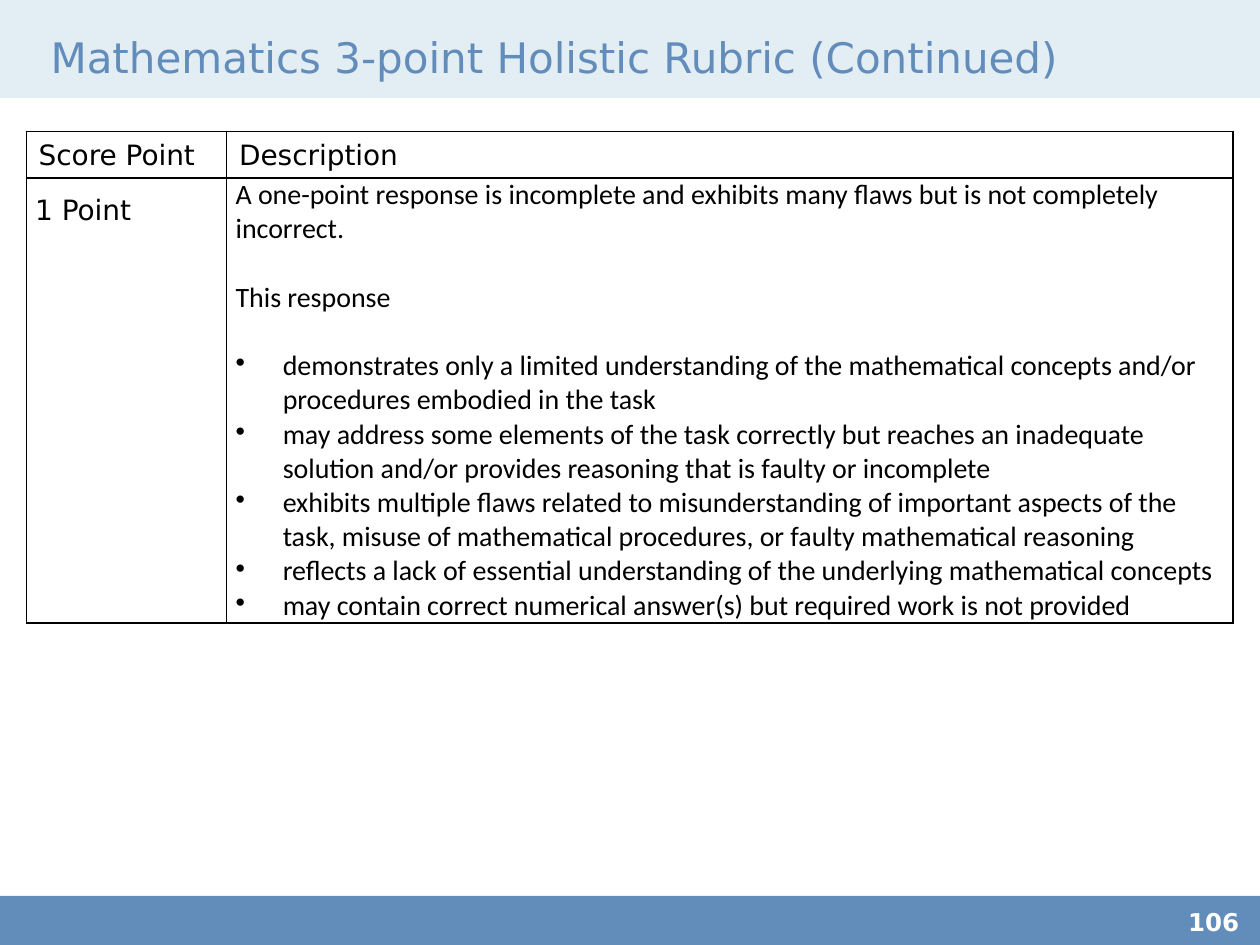
from dataclasses import dataclass

from lxml import etree
from pptx import Presentation
from pptx.dml.color import RGBColor
from pptx.enum.shapes import MSO_SHAPE
from pptx.enum.text import MSO_ANCHOR
from pptx.oxml.ns import qn
from pptx.util import Cm, Pt

RECT = MSO_SHAPE.RECTANGLE
TOP, MID, LOW = MSO_ANCHOR.TOP, MSO_ANCHOR.MIDDLE, MSO_ANCHOR.BOTTOM


@dataclass(frozen=True)
class Theme:
    blue: str = "628DBB"
    pale: str = "E3EDF4"
    white: str = "FFFFFF"
    black: str = "000000"
    head: str = "DejaVu Sans"
    body: str = "Calibri"
    large: int = 24
    text: int = 16
    small: int = 14
    gap: float = 19.5


THEME = Theme()
TITLE = "Mathematics 3-point Holistic Rubric (Continued)"
PAGE = "106"
HEADS = ["Score Point", "Description"]
SCORE = "1 Point"
INTRO = [
    "A one-point response is incomplete and exhibits many flaws but is not completely incorrect.",
    "This response",
]
TRAITS = [
    "demonstrates only a limited understanding of the mathematical concepts and/or procedures embodied in the task",
    "may address some elements of the task correctly but reaches an inadequate solution and/or provides reasoning that is faulty or incomplete",
    "exhibits multiple flaws related to misunderstanding of important aspects of the task, misuse of mathematical procedures, or faulty mathematical reasoning",
    "reflects a lack of essential understanding of the underlying mathematical concepts",
    "may contain correct numerical answer(s) but required work is not provided",
]
BARS = [
    (0, 18.06, 25.43, 1.07, THEME.blue),
    (0, 0, 25.4, 3.33, THEME.pale),
    (0, 1.98, 25.4, 2.18, THEME.white),
]
COLS = [4.04, 20.29]
ROWS = [0.91, 8.97]
HEAD_PAD = (0.25, 0.13, 0.25, 0.13)
BODY_PAD = (0.18, 0, 0.18, 0)


def pad(box, sides):
    """Set the left, top, right and bottom margins of a cell or text frame."""
    (box.margin_left, box.margin_top,
     box.margin_right, box.margin_bottom) = map(Cm, sides)


def write(frame, lines, size, face, color, bold=False):
    """Fill a text frame with lines of one style."""
    frame.text = "\n".join(lines)
    for para in frame.paragraphs:
        for run in para.runs:
            font = run.font
            font.size, font.name, font.bold = Pt(size), face, bold
            font.color.rgb = RGBColor.from_string(color)


def label(slide, place, text, size, color, sides, anchor, bold=False):
    """Add a one-line text box."""
    frame = slide.shapes.add_textbox(*map(Cm, place)).text_frame
    frame.word_wrap = True
    frame.vertical_anchor = anchor
    pad(frame, sides)
    write(frame, [text], size, THEME.head, color, bold)


def border(cell):
    """Draw a thin line on all four sides of a cell."""
    props = cell._tc.get_or_add_tcPr()
    for spot, side in enumerate(("lnL", "lnR", "lnT", "lnB")):
        line = etree.Element(qn("a:" + side), w=str(Pt(1)))
        fill = etree.SubElement(line, qn("a:solidFill"))
        etree.SubElement(fill, qn("a:srgbClr"), val=THEME.black)
        props.insert(spot, line)


def bullet(para):
    """Give a paragraph a bullet, a hanging indent and a tab stop."""
    props = para._p.get_or_add_pPr()
    hang = Cm(0.95)
    props.set("marL", str(hang))
    props.set("indent", str(-hang))
    etree.SubElement(props, qn("a:buChar"), char="•")
    tabs = etree.SubElement(props, qn("a:tabLst"))
    etree.SubElement(tabs, qn("a:tab"), pos=str(Cm(1.27)), algn="l")


def rubric(slide):
    """Add the table of score point and description."""
    shape = slide.shapes.add_table(
        len(ROWS), len(COLS), Cm(0.53), Cm(2.65), Cm(sum(COLS)), Cm(sum(ROWS)))
    table = shape.table
    table.first_row = table.horz_banding = False
    for col, width in zip(table.columns, COLS):
        col.width = Cm(width)
    for row, height in zip(table.rows, ROWS):
        row.height = Cm(height)

    grid = [[[head] for head in HEADS], [[SCORE], INTRO + TRAITS]]
    for r, row in enumerate(grid):
        for c, lines in enumerate(row):
            cell = table.cell(r, c)
            cell.fill.background()
            border(cell)
            pad(cell, BODY_PAD if r else HEAD_PAD)
            cell.vertical_anchor = TOP if r else LOW
            face = THEME.body if r and c else THEME.head
            write(cell.text_frame, lines, THEME.text, face, THEME.black)

    table.cell(1, 0).text_frame.paragraphs[0].line_spacing = 1.5
    paras = table.cell(1, 1).text_frame.paragraphs
    first = len(INTRO)
    for para in paras[1:first + 1]:
        para.space_before = Pt(THEME.gap)
    for para in paras[first:]:
        bullet(para)


def main():
    """Build and save the slide."""
    deck = Presentation()
    deck.slide_width, deck.slide_height = Cm(25.4), Cm(19.05)
    slide = deck.slides.add_slide(deck.slide_layouts[6])
    for *place, color in BARS:
        bar = slide.shapes.add_shape(RECT, *map(Cm, place))
        bar.shadow.inherit = False
        bar.fill.solid()
        bar.fill.fore_color.rgb = RGBColor.from_string(color)
        bar.line.fill.background()
    label(slide, (1.02, 0.58, 22.86, 1.24), TITLE, THEME.large, THEME.blue,
          (0, 0, 0.25, 0.13), MID)
    rubric(slide)
    label(slide, (23.95, 18.29, 1.45, 0.76), PAGE, THEME.small, THEME.white,
          (0, 0, 0, 0), TOP, True)
    deck.save("out.pptx")


if __name__ == "__main__":
    main()
